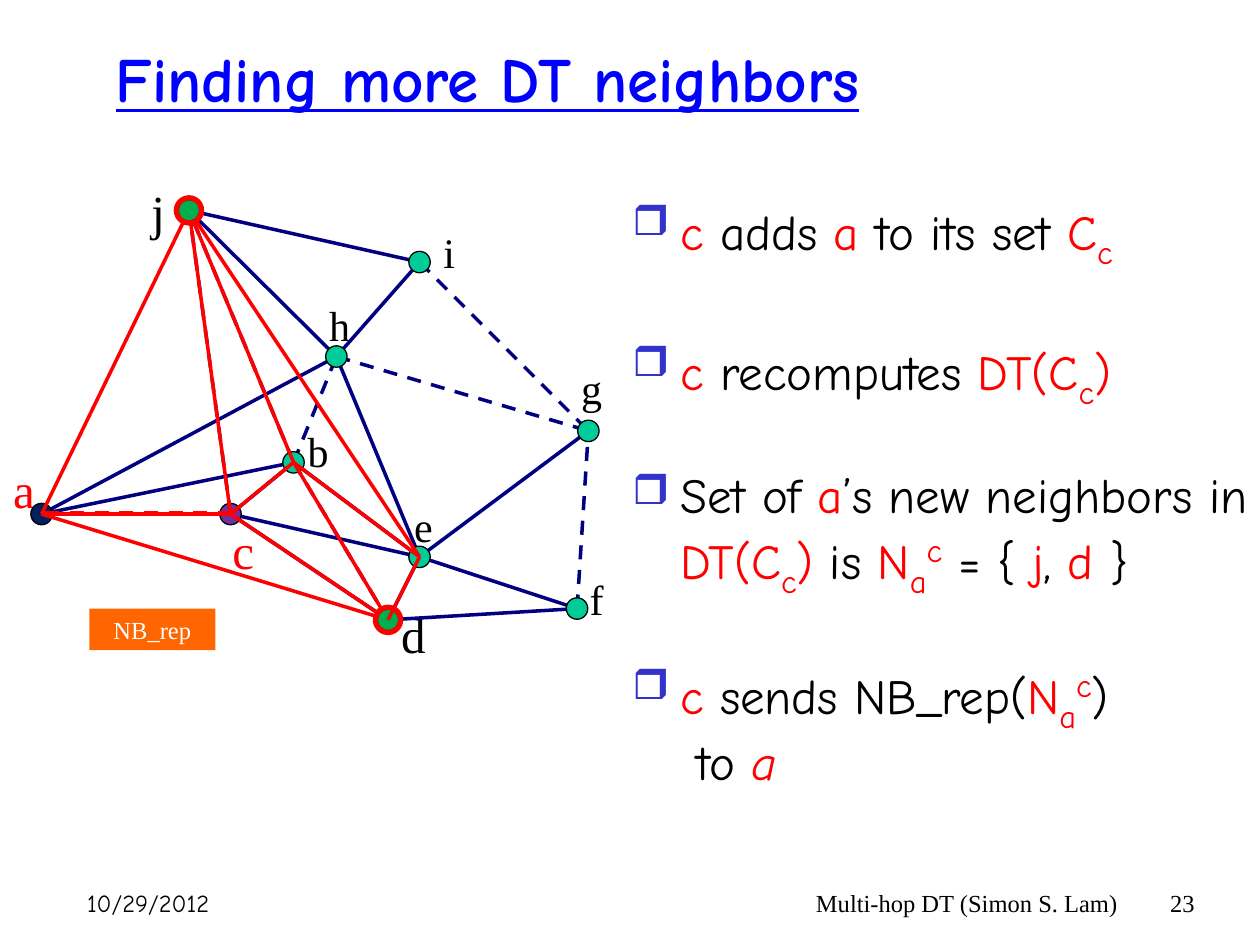
from typing import NamedTuple

from lxml import etree
from pptx import Presentation
from pptx.dml.color import RGBColor
from pptx.enum.dml import MSO_LINE
from pptx.enum.shapes import MSO_CONNECTOR, MSO_SHAPE
from pptx.enum.text import MSO_ANCHOR, PP_ALIGN
from pptx.oxml.ns import qn
from pptx.util import Inches, Pt

STRAIGHT = MSO_CONNECTOR.STRAIGHT
OVAL, RECT = MSO_SHAPE.OVAL, MSO_SHAPE.RECTANGLE
DASH = MSO_LINE.DASH
MIDDLE = MSO_ANCHOR.MIDDLE
LEFT, CENTER, RIGHT = PP_ALIGN.LEFT, PP_ALIGN.CENTER, PP_ALIGN.RIGHT

BLACK = RGBColor(0x00, 0x00, 0x00)
WHITE = RGBColor(0xFF, 0xFF, 0xFF)
RED = RGBColor(0xFF, 0x00, 0x00)
BLUE = RGBColor(0x00, 0x00, 0xFF)
NAVY = RGBColor(0x00, 0x00, 0x80)
TEAL = RGBColor(0x00, 0xCC, 0x99)
GREEN = RGBColor(0x00, 0xB0, 0x50)
PURPLE = RGBColor(0x70, 0x30, 0xA0)
DARK_BLUE = RGBColor(0x00, 0x20, 0x60)
ORANGE = RGBColor(0xFF, 0x66, 0x00)
BULLET_COLOR = "3333CC"

COMIC, TIMES = "Comic Neue", "Times New Roman"
NODE_SIZE, RING_SIZE = 0.17, 0.2
SUB, SUP = -25, 30


class Node(NamedTuple):
    x: float
    y: float
    fill: RGBColor = TEAL


class Label(NamedTuple):
    text: str
    box: tuple[float, float, float, float]
    size: int = 24
    color: RGBColor = BLACK
    font: str = TIMES
    align: PP_ALIGN = CENTER
    wrap: bool = False


class Span(NamedTuple):
    text: str
    color: RGBColor = BLACK
    base: int = 0
    italic: bool = False


class Item(NamedTuple):
    spans: list[Span]
    before: float
    bullet: bool = True


NODES = {
    "a": Node(0.33, 4.08, DARK_BLUE), "b": Node(2.33, 3.67),
    "c": Node(1.83, 4.08, PURPLE), "d": Node(3.08, 4.92, GREEN),
    "e": Node(3.33, 4.42), "f": Node(4.58, 4.83), "g": Node(4.67, 3.42),
    "h": Node(2.67, 2.83), "i": Node(3.33, 2.08), "j": Node(1.5, 1.67, GREEN),
}
DASHED_EDGES = "cj bj bh bd fg hg ig".split()
SOLID_EDGES = "hj cd cb be ed he df ef eg hi ji ce ab ah".split()
RED_EDGES = "aj ac jc bj ad cd bd je cb".split()
TOP_RED_EDGES = "be ed".split()
NEW_NEIGHBORS = "jd"

LABELS = [
    Label("h", (2.5, 2.33, 0.39, 0.5)),
    Label("c", (1.74, 4.08, 0.38, 0.57), 28, RED),
    Label("i", (3.42, 1.75, 0.28, 0.5)),
    Label("b", (2.33, 3.33, 0.39, 0.5)),
    Label("j", (1.1, 1.39, 0.31, 0.57), 28),
    Label("d", (3.08, 4.75, 0.4, 0.57), 28),
    Label("e", (3.17, 3.92, 0.38, 0.5)),
    Label("f", (4.58, 4.5, 0.31, 0.5)),
    Label("g", (4.5, 2.83, 0.39, 0.5)),
    Label("a", (0, 3.6, 0.38, 0.57), 28, RED),
]
FOOTERS = [
    Label("10/29/2012", (0.44, 7, 1.32, 0.5), 14, BLACK, COMIC, RIGHT, True),
    Label("Multi-hop DT (Simon S. Lam)", (5.16, 7, 3.81, 0.5), 14, align=RIGHT, wrap=True),
    Label("23", (9.08, 7, 0.5, 0.5), 14, align=RIGHT, wrap=True),
]
TITLE = Label("Finding more DT neighbors", (0.82, 0.28, 8.75, 0.67), 36, BLUE, COMIC, LEFT, True)

C_SET = [Span("C", RED), Span("c", RED, SUB)]
DT_SET = [Span("DT(C", RED), Span("c", RED, SUB), Span(")", RED)]
N_SET = [Span("N", RED), Span("a", RED, SUB), Span("c", RED, SUP)]
ITEMS = [
    Item([Span("c", RED), Span(" adds "), Span("a", RED), Span(" to its set "), *C_SET], 0),
    Item([Span("c ", RED), Span("recomputes "), *DT_SET], 41),
    Item([Span("Set of "), Span("a", RED), Span("’s new neighbors in "), *DT_SET,
          Span(" is "), *N_SET, Span(" = { "), Span("j", RED), Span(","),
          Span(" d ", RED), Span("}")], 38),
    Item([Span("c", RED), Span(" sends NB_rep("), *N_SET, Span(")")], 38),
    Item([Span("to "), Span("a", RED, italic=True)], 5.6, False),
]


def set_font(r, **values) -> None:
    color = values.pop("color")
    for name, value in values.items():
        setattr(r.font, name, value)
    r.font.color.rgb = color


def add_line(shapes, start: tuple, end: tuple, color: RGBColor, dashed: bool = False) -> None:
    line = shapes.add_connector(STRAIGHT, *map(Inches, (*start, *end)))
    line.line.color.rgb = color
    line.line.width = Pt(2)
    if dashed:
        line.line.dash_style = DASH
    etree.SubElement(line._element.spPr, qn("a:effectLst"))


def add_edges(shapes, edges: list[str], color: RGBColor, dashed: bool = False) -> None:
    for start, end in edges:
        add_line(shapes, NODES[start][:2], NODES[end][:2], color, dashed)


def add_circle(shapes, node: Node, size: float, line: RGBColor, width: float,
               filled: bool = True) -> None:
    sp = shapes.add_shape(OVAL, Inches(node.x - size / 2), Inches(node.y - size / 2),
                          Inches(size), Inches(size))
    sp.shadow.inherit = False
    if filled:
        sp.fill.solid()
        sp.fill.fore_color.rgb = node.fill
    else:
        sp.fill.background()
    sp.line.color.rgb = line
    sp.line.width = Pt(width)


def write_label(tf, label: Label, **extra):
    tf.word_wrap = label.wrap
    p = tf.paragraphs[0]
    p.alignment = label.align
    r = p.add_run()
    r.text = label.text
    set_font(r, name=label.font, size=Pt(label.size), color=label.color, **extra)


def add_label(shapes, label: Label, **extra):
    sp = shapes.add_textbox(*map(Inches, label.box))
    write_label(sp.text_frame, label, **extra)
    return sp


def add_message(shapes, label: Label) -> None:
    sp = shapes.add_shape(RECT, *map(Inches, label.box))
    sp.shadow.inherit = False
    sp.fill.solid()
    sp.fill.fore_color.rgb = ORANGE
    sp.line.fill.background()
    write_label(sp.text_frame, label)


def set_bullet(p) -> None:
    pPr = p._p.get_or_add_pPr()
    color = etree.SubElement(pPr, qn("a:buClr"))
    etree.SubElement(color, qn("a:srgbClr"), val=BULLET_COLOR)
    etree.SubElement(pPr, qn("a:buSzPct"), val="85000")
    etree.SubElement(pPr, qn("a:buChar"), char="❒")


def add_items(shapes) -> None:
    tf = shapes.add_textbox(*map(Inches, (4.92, 1.5, 5.08, 4.64))).text_frame
    tf.word_wrap = True
    for i, item in enumerate(ITEMS):
        p = tf.add_paragraph() if i else tf.paragraphs[0]
        p.line_spacing = 0.9
        p.space_before = Pt(item.before)
        margin, indent = (0.38, -0.38) if item.bullet else (0.51, 0)
        pPr = p._p.get_or_add_pPr()
        pPr.set("marL", str(Inches(margin)))
        pPr.set("indent", str(Inches(indent)))
        if item.bullet:
            set_bullet(p)
        for span in item.spans:
            r = p.add_run()
            r.text = span.text
            set_font(r, name=COMIC, size=Pt(32 if span.base else 28),
                     color=span.color, italic=span.italic)
            if span.base:
                r.font._element.set("baseline", str(span.base * 1000))


def main() -> None:
    prs = Presentation()
    prs.slide_width, prs.slide_height = Inches(10), Inches(7.5)
    shapes = prs.slides.add_slide(prs.slide_layouts[6]).shapes

    title = add_label(shapes, TITLE, bold=True, underline=True)
    title.text_frame.vertical_anchor = MIDDLE
    add_items(shapes)
    for label in LABELS + FOOTERS:
        add_label(shapes, label)

    add_edges(shapes, DASHED_EDGES, NAVY, dashed=True)
    add_edges(shapes, SOLID_EDGES, NAVY)
    for name, node in NODES.items():
        if name not in NEW_NEIGHBORS:
            add_circle(shapes, node, NODE_SIZE, BLACK, 0.75)
    add_edges(shapes, RED_EDGES, RED)
    add_line(shapes, (0.36, 4.07), (1.86, 4.07), RED, dashed=True)
    add_message(shapes, Label("NB_rep", (0.71, 4.83, 1, 0.33), 14, WHITE, wrap=True))
    for name in NEW_NEIGHBORS:
        add_circle(shapes, NODES[name], NODE_SIZE, BLACK, 0.75)
    add_edges(shapes, TOP_RED_EDGES, RED)
    for name in NEW_NEIGHBORS:
        add_circle(shapes, NODES[name], RING_SIZE, RED, 3, filled=False)
    prs.save("out.pptx")


if __name__ == "__main__":
    main()
